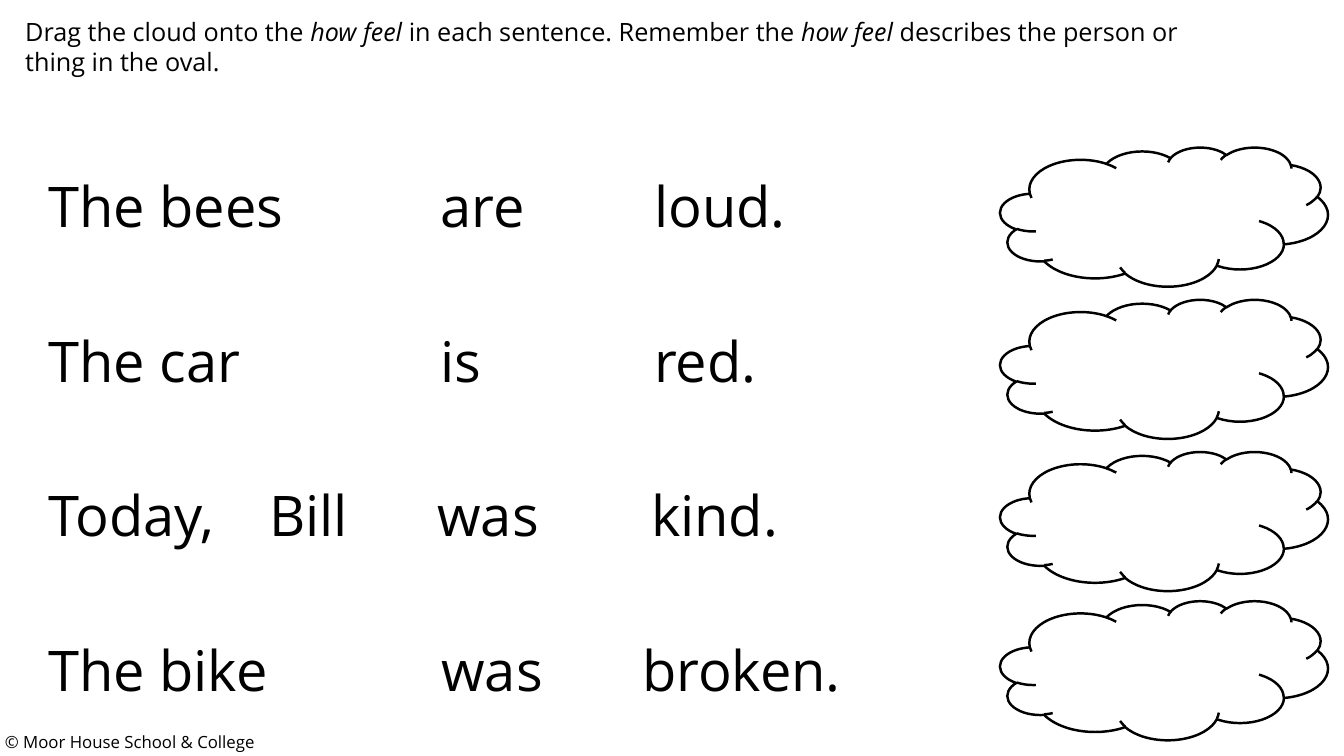
from lxml.etree import SubElement
from pptx import Presentation
from pptx.dml.color import RGBColor
from pptx.enum.shapes import MSO_SHAPE as Shape
from pptx.enum.text import MSO_ANCHOR as Anchor, MSO_AUTO_SIZE as Fit, PP_ALIGN as Align
from pptx.oxml.ns import qn
from pptx.util import Inches, Pt

BLACK = RGBColor(0, 0, 0)
FONT = "Open Sans"

# (text, italic)
TASK = [
    ("Drag the cloud onto the ", False),
    ("how feel ", True),
    ("in each sentence. Remember the ", False),
    ("how feel ", True),
    ("describes the person or thing in the oval.", False),
]
# (words, tab stops between them, sentence top, cloud top)
ROWS = [
    (["The bees", "are", "loud."], [3.89, 6.01], 1.65, 1.46),
    (["The car", "is", "red."], [3.89, 6.01], 3.19, 2.97),
    (["Today,", "Bill", "was", "kind."], [2.19, 3.86, 5.98], 4.72, 4.48),
    (["The bike", "was", "broken."], [3.9, 5.89], 6.26, 5.96),
]
FOOTER = "© Moor House School & College"


def place(box, left, top, width, height):
    box.left, box.top = Inches(left), Inches(top)
    box.width, box.height = Inches(width), Inches(height)


def write(box, runs, size, stops=()):
    """Fill a box with one left-aligned paragraph of (text, italic) runs."""
    frame = box.text_frame
    frame.word_wrap = True
    frame.auto_size = Fit.NONE
    frame.vertical_anchor = Anchor.TOP
    para = frame.paragraphs[0]
    para.alignment = Align.LEFT
    if stops:
        tabs = SubElement(para._p.get_or_add_pPr(), qn("a:tabLst"))
        for stop in stops:
            SubElement(tabs, qn("a:tab"), pos=str(Inches(stop)), algn="l")
    for text, italic in runs:
        run = para.add_run()
        run.text = text
        font = run.font
        font.name, font.size, font.italic = FONT, Pt(size), italic
        font.color.rgb = BLACK


def add_text(slide, at, runs, size, stops=()):
    box = slide.shapes.add_textbox(*map(Inches, at))
    write(box, runs, size, stops)


def add_cloud(slide, top):
    cloud = slide.shapes.add_shape(
        Shape.CLOUD, Inches(9.92), Inches(top), Inches(3.25), Inches(1.38))
    cloud.shadow.inherit = False
    cloud.fill.background()
    cloud.line.color.rgb = BLACK
    cloud.line.width = Pt(1.75)


def main():
    deck = Presentation()
    deck.slide_width, deck.slide_height = Inches(13.33), Inches(7.5)
    slide = deck.slides.add_slide(deck.slide_layouts[5])

    title = slide.shapes.title
    place(title, 0.15, 0.11, 11.98, 0.71)
    write(title, TASK, 18)

    add_text(slide, (-0.05, 7.21, 5.12, 0.3), [(FOOTER, False)], 12)
    for words, stops, top, cloud_top in ROWS:
        add_text(slide, (0.38, top, 9.5, 0.77), [("\t".join(words), False)], 40, stops)
        add_cloud(slide, cloud_top)

    deck.save("out.pptx")


if __name__ == "__main__":
    main()
